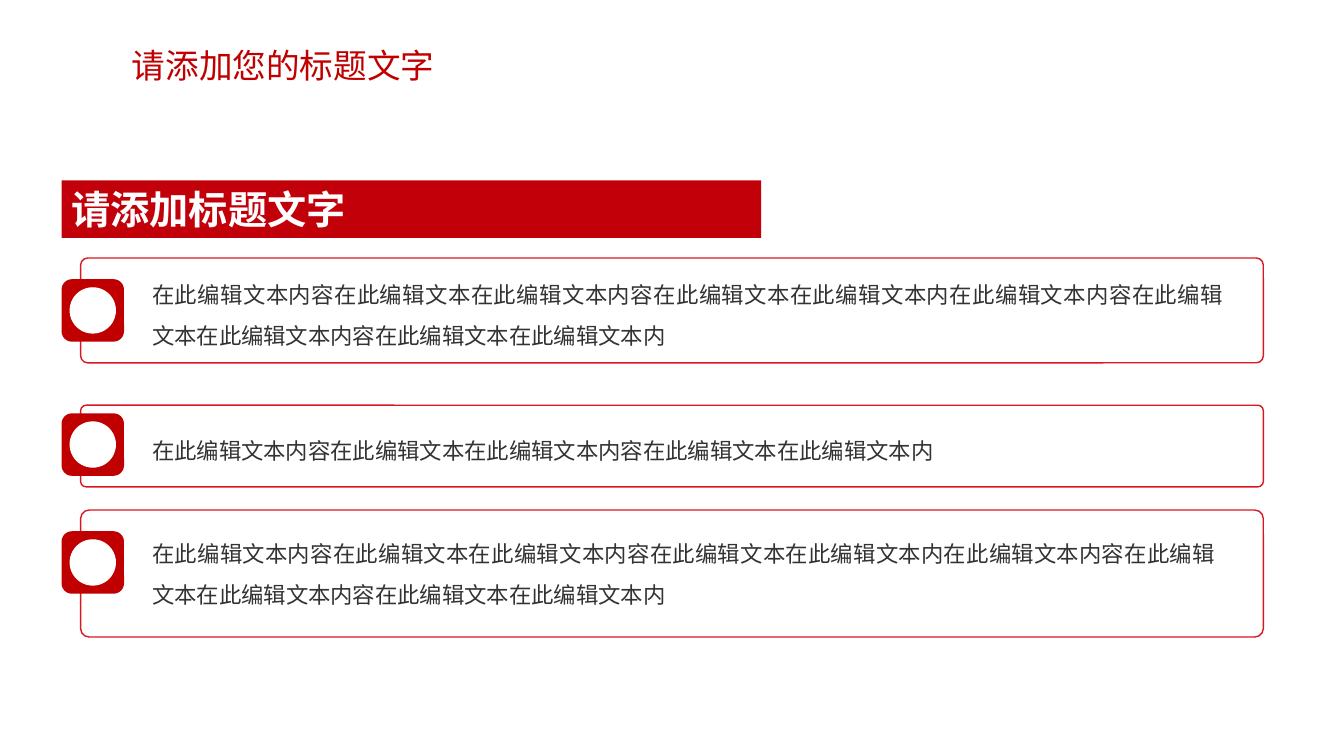
from dataclasses import dataclass

from pptx import Presentation
from pptx.dml.color import RGBColor
from pptx.enum.shapes import MSO_SHAPE
from pptx.enum.text import MSO_ANCHOR, PP_ALIGN
from pptx.util import Inches, Pt

RECT, ROUNDED, OVAL = MSO_SHAPE.RECTANGLE, MSO_SHAPE.ROUNDED_RECTANGLE, MSO_SHAPE.OVAL
TOP, MIDDLE = MSO_ANCHOR.TOP, MSO_ANCHOR.MIDDLE
LEFT, JUSTIFY = PP_ALIGN.LEFT, PP_ALIGN.JUSTIFY


@dataclass(frozen=True)
class Theme:
    font: str = "Arial"
    red: str = "C00000"
    bar: str = "C2000A"
    outline: str = "D7181F"
    white: str = "FFFFFF"
    body: str = "333333"
    title_size: int = 24
    bar_size: int = 28
    body_size: int = 16


THEME = Theme()
WIDTH, HEIGHT = Inches(13.33), Inches(7.5)

# Shared columns, in percent of the slide width
BADGE_X, BADGE_W = 4.58, 4.65
PANEL_X, PANEL_W = 6, 88
TEXT_X = 10.58

SENTENCE = "在此编辑文本内容在此编辑文本在此编辑文本内容在此编辑文本在此编辑文本内"

# Panel top and height, badge top, text top, width and height (percent), wording
ITEMS = [
    (34.13, 13.87, 36.93, 34.8, 81.25, 12.13, SENTENCE * 2),
    (53.6, 10.8, 54.67, 55.33, 81.25, 6.67, SENTENCE),
    (67.47, 16.8, 70.27, 69.07, 80.65, 12.13, SENTENCE * 2),
]


def place(x, y, w, h):
    """Turn percentages of the slide into lengths."""
    return [round(share * side / 100)
            for share, side in zip((x, y, w, h), (WIDTH, HEIGHT) * 2)]


def add_box(s, kind, area, fill=None, line=None, radius=None):
    sp = s.shapes.add_shape(kind, *place(*area))
    sp.shadow.inherit = False
    if radius is not None:
        sp.adjustments[0] = radius
    if fill:
        sp.fill.solid()
        sp.fill.fore_color.rgb = RGBColor.from_string(fill)
    else:
        sp.fill.background()
    if line:
        sp.line.color.rgb = RGBColor.from_string(line)
        sp.line.width = Pt(1)
    else:
        sp.line.fill.background()
    return sp


def write(sp, text, size, color, bold=False, align=LEFT, anchor=TOP, spacing=1.0):
    tf = sp.text_frame
    tf.word_wrap = True
    tf.vertical_anchor = anchor
    p = tf.paragraphs[0]
    p.alignment, p.line_spacing = align, spacing
    r = p.add_run()
    r.text = text
    for name, value in {"name": THEME.font, "size": Pt(size), "bold": bold}.items():
        setattr(r.font, name, value)
    r.font.color.rgb = RGBColor.from_string(color)


def add_text(s, area, *content, **style):
    write(s.shapes.add_textbox(*place(*area)), *content, **style)


def add_badge(s, y):
    add_box(s, ROUNDED, (BADGE_X, y, BADGE_W, 8.27), fill=THEME.red)
    add_box(s, OVAL, (BADGE_X + 0.6, y + 1.07, BADGE_W - 1.2, 6.13), fill=THEME.white)


def add_item(s, panel_y, panel_h, badge_y, text_y, text_w, text_h, text):
    add_box(s, ROUNDED, (PANEL_X, panel_y, PANEL_W, panel_h),
            line=THEME.outline, radius=0.067)
    add_badge(s, badge_y)
    add_text(s, (TEXT_X, text_y, text_w, text_h), text, THEME.body_size,
             THEME.body, align=JUSTIFY, spacing=1.5)


def main():
    prs = Presentation()
    prs.slide_width, prs.slide_height = WIDTH, HEIGHT
    s = prs.slides.add_slide(prs.slide_layouts[6])

    # Slide title
    add_text(s, (9.08, 5.33, 35.93, 6.67), "请添加您的标题文字",
             THEME.title_size, THEME.red)

    # Outlined panels with badges
    for item in ITEMS:
        add_item(s, *item)

    # Heading bar
    bar = add_box(s, RECT, (BADGE_X, 23.87, 52.06, 7.6), fill=THEME.bar)
    write(bar, "请添加标题文字", THEME.bar_size, THEME.white, bold=True,
          align=JUSTIFY, anchor=MIDDLE)

    prs.save("out.pptx")


if __name__ == "__main__":
    main()
